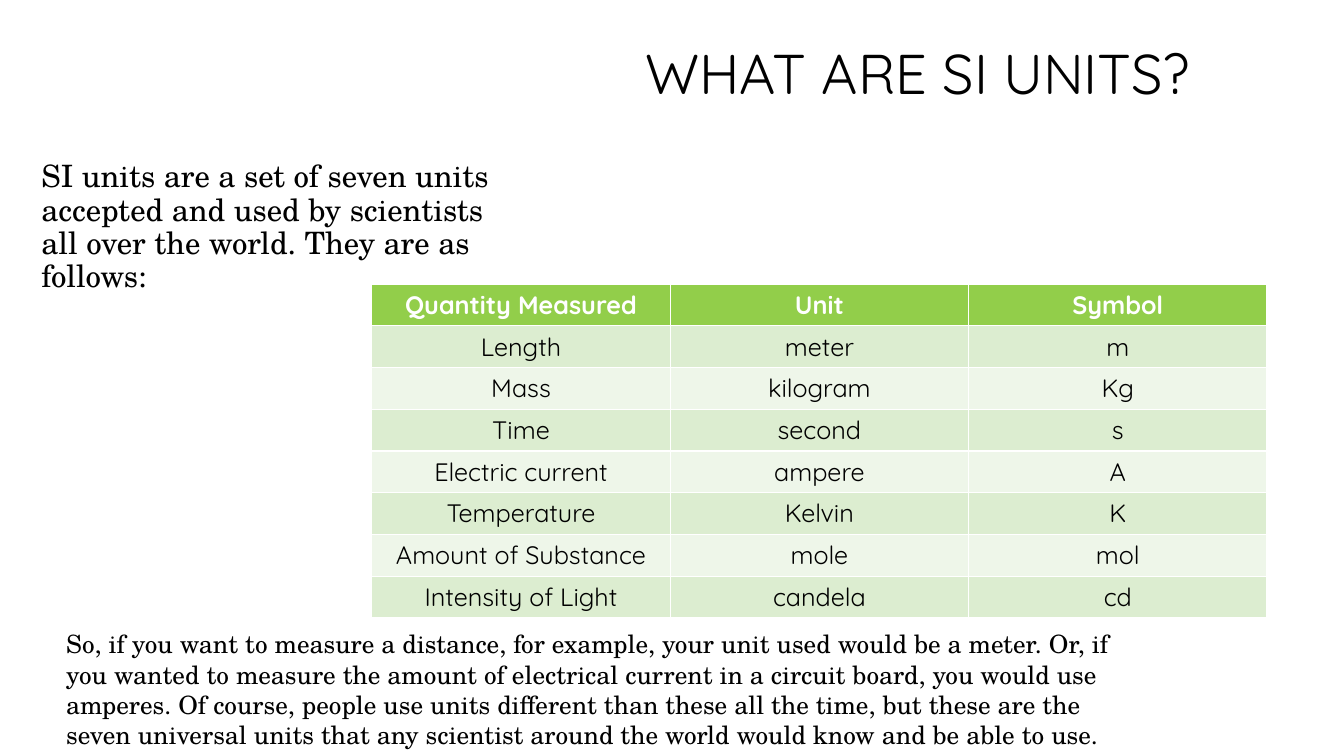
from lxml import etree
from pptx import Presentation
from pptx.dml.color import RGBColor
from pptx.enum.text import MSO_ANCHOR, MSO_AUTO_SIZE, PP_ALIGN
from pptx.oxml.ns import qn
from pptx.util import Cm, Pt

LEFT, CENTER, RIGHT = PP_ALIGN.LEFT, PP_ALIGN.CENTER, PP_ALIGN.RIGHT
TOP, MIDDLE = MSO_ANCHOR.TOP, MSO_ANCHOR.MIDDLE
NO_AUTOFIT = MSO_AUTO_SIZE.NONE

BLACK = RGBColor(0x00, 0x00, 0x00)
WHITE = RGBColor(0xFF, 0xFF, 0xFF)
HEADER_GREEN = RGBColor(0x92, 0xCE, 0x4A)
BAND_GREEN = RGBColor(0xDC, 0xED, 0xD0)
PALE_GREEN = RGBColor(0xEE, 0xF6, 0xE9)

SANS = "Quicksand"
SERIF = "TeX Gyre Schola"

INTRO = ("SI units are a set of seven units accepted and used by scientists "
         "all over the world. They are as follows:")
CLOSING = ("So, if you want to measure a distance, for example, your unit used "
           "would be a meter. Or, if you wanted to measure the amount of "
           "electrical current in a circuit board, you would use amperes. Of "
           "course, people use units different than these all the time, but "
           "these are the seven universal units that any scientist around the "
           "world would know and be able to use.")
UNITS = [
    ("Quantity Measured", "Unit", "Symbol"),
    ("Length", "meter", "m"),
    ("Mass", "kilogram", "Kg"),
    ("Time", "second", "s"),
    ("Electric current", "ampere", "A"),
    ("Temperature", "Kelvin", "K"),
    ("Amount of Substance", "mole", "mol"),
    ("Intensity of Light", "candela", "cd"),
]


def write_text(frame, text, size, font, color=BLACK, bold=False, align=LEFT,
               spacing=1.0):
    para = frame.paragraphs[0]
    para.alignment = align
    para.line_spacing = spacing
    para.space_before = Pt(0)
    span = para.add_run()
    span.text = text
    span.font.size = Pt(size)
    span.font.name = font
    span.font.bold = bold
    span.font.color.rgb = color
    return para


def place(shape, box, anchor):
    shape.left, shape.top, shape.width, shape.height = map(Cm, box)
    frame = shape.text_frame
    frame.word_wrap = True
    frame.auto_size = NO_AUTOFIT
    frame.vertical_anchor = anchor
    return frame


def add_title(page, box):
    frame = place(page.shapes.title, box, MIDDLE)
    write_text(frame, "WHAT ARE SI UNITS?", 40, SANS, align=RIGHT, spacing=0.9)


def add_intro(page, box):
    frame = place(page.placeholders[1], box, TOP)
    para = write_text(frame, INTRO, 22, SERIF, spacing=0.9)
    properties = para._p.get_or_add_pPr()
    properties.set("marL", "0")
    properties.set("indent", "0")
    etree.SubElement(properties, qn("a:buNone"))


def add_units_table(page, box):
    table = page.shapes.add_table(len(UNITS), len(UNITS[0]), *map(Cm, box)).table
    for row, values in enumerate(UNITS):
        header = row == 0
        band = BAND_GREEN if row % 2 else PALE_GREEN
        for column, value in enumerate(values):
            cell = table.cell(row, column)
            cell.fill.solid()
            cell.fill.fore_color.rgb = HEADER_GREEN if header else band
            write_text(cell.text_frame, value, 18, SANS, bold=header,
                       color=WHITE if header else BLACK, align=CENTER)


def add_closing(page, box):
    frame = place(page.shapes.add_textbox(*map(Cm, box)), box, TOP)
    write_text(frame, CLOSING, 18, SERIF)


def build_units_slide(deck):
    page = deck.slides.add_slide(deck.slide_layouts[1])
    add_title(page, (6.32, 0.84, 23.93, 2.16))
    add_intro(page, (0.79, 3.94, 12.27, 5.2))
    add_units_table(page, (9.37, 7.16, 22.56, 8.24))
    add_closing(page, (1.42, 15.72, 26.8, 3.33))


def main():
    deck = Presentation()
    deck.slide_width, deck.slide_height = Cm(33.87), Cm(19.05)
    build_units_slide(deck)
    deck.save("out.pptx")


if __name__ == "__main__":
    main()
